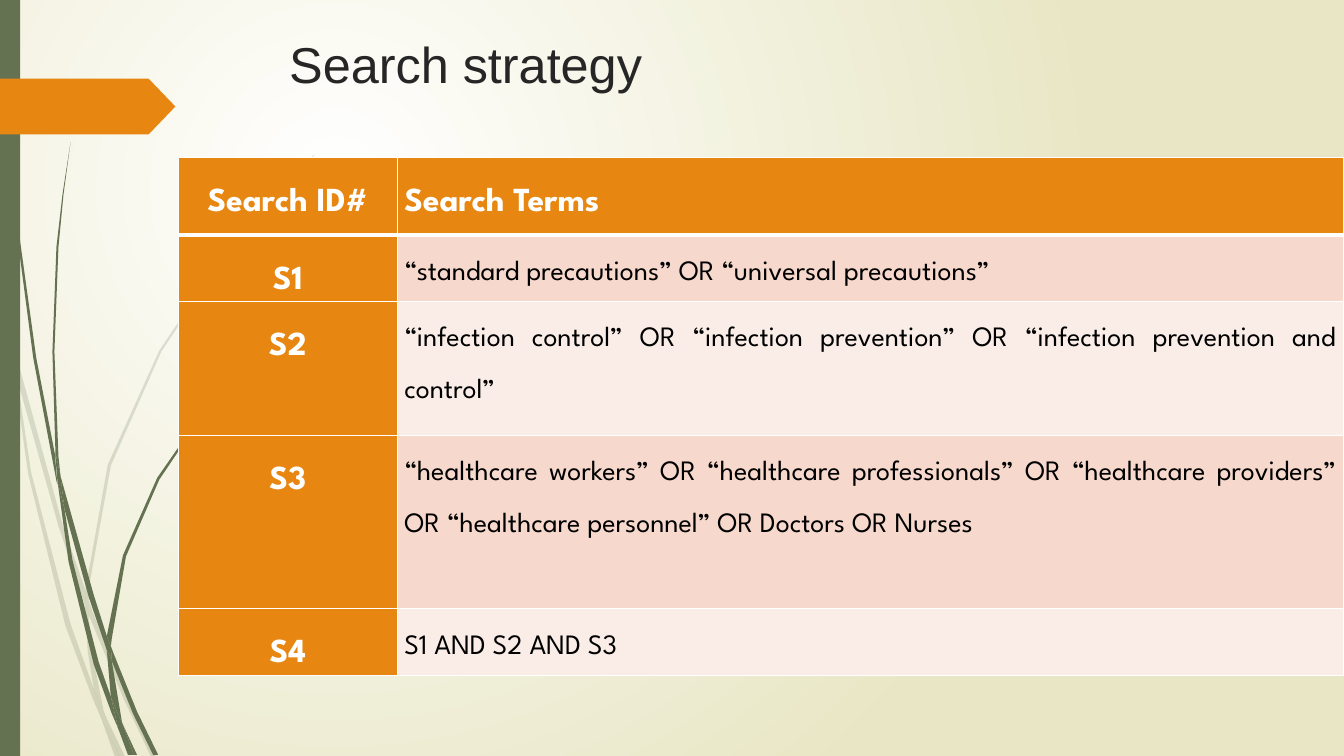
from dataclasses import dataclass

from lxml.etree import SubElement
from pptx import Presentation
from pptx.dml.color import RGBColor
from pptx.enum.shapes import MSO_SHAPE
from pptx.enum.text import MSO_ANCHOR, PP_ALIGN
from pptx.oxml.ns import qn
from pptx.util import Pt

GREEN, ORANGE, WHITE = "647252", "E78712", "FFFFFF"
BLADE_UNIT = Pt(0.72)  # blade outlines are in hundredths of an inch
Outline = list[tuple[int, int]]


@dataclass
class Tuft:
    opacity: int
    blades: list[Outline]


@dataclass
class SearchRow:
    label: str
    terms: str
    height: float
    terms_fill: str
    header: bool = False


PALE_TUFT = Tuft(20, [
    [(11, 350), (9, 322), (0, 282), (0, 299), (10, 344)],
    [(58, 522), (84, 599), (85, 586), (62, 520), (14, 345), (17, 376)],
    [(92, 607), (88, 596), (88, 610), (123, 694), (150, 751), (155, 751), (127, 692)],
    [(119, 751), (124, 751), (105, 711)],
    [(93, 683), (70, 619), (31, 469), (17, 376), (11, 350), (28, 470), (65, 621), (92, 693),
     (101, 714), (99, 707)],
    [(84, 599), (87, 646), (93, 683), (96, 692), (105, 711), (103, 706), (91, 646), (88, 610),
     (88, 608)],
    [(88, 584), (110, 462), (160, 349), (229, 245), (268, 198), (290, 175), (312, 154), (312, 153),
     (289, 175), (268, 197), (228, 244), (158, 348), (107, 461), (85, 584), (85, 586), (88, 596)],
    [(101, 714), (114, 751), (119, 751)],
    [(88, 608), (88, 610), (88, 596), (85, 586), (84, 599)],
    [(96, 692), (93, 683), (99, 707), (101, 714), (119, 751), (105, 711)],
])
DARK_TUFT = Tuft(100, [
    [(7, 110), (17, 233), (33, 355), (56, 477), (57, 481), (55, 457), (55, 453), (36, 355),
     (19, 232), (8, 109), (5, 48), (4, 0), (3, 0), (4, 48)],
    [(88, 592), (106, 645), (106, 633), (106, 631), (93, 590), (60, 472), (64, 505)],
    [(113, 649), (110, 641), (111, 656), (132, 708), (152, 749), (157, 749), (136, 706)],
    [(110, 691), (98, 657), (72, 556), (64, 505), (57, 477), (68, 557), (93, 659), (111, 708),
     (117, 722), (116, 717)],
    [(60, 472), (58, 453), (54, 349), (58, 245), (63, 193), (70, 141), (62, 193), (56, 245),
     (52, 349), (55, 449)],
    [(133, 749), (136, 749), (122, 719)],
    [(57, 477), (64, 505), (60, 472), (55, 449), (55, 453)],
    [(111, 633), (125, 552), (158, 476), (205, 406), (231, 374), (245, 359), (261, 344), (260, 344),
     (245, 358), (231, 373), (204, 405), (156, 474), (122, 551), (106, 631), (110, 641)],
    [(117, 722), (127, 749), (131, 749)],
    [(106, 645), (110, 691), (116, 706), (122, 719), (121, 716), (111, 656), (109, 651)],
    [(106, 645), (109, 651), (111, 656), (110, 641), (106, 631), (106, 633)],
    [(116, 706), (110, 691), (116, 717), (117, 722), (130, 749), (133, 749), (122, 719)],
])
SEARCH_ROWS = [
    SearchRow("Search ID#", "Search Terms", 55.4, ORANGE, header=True),
    SearchRow("S1", "“standard precautions” OR “universal precautions”", 47.6, "F6D9CC"),
    SearchRow("S2", "“infection control” OR “infection prevention” OR "
              "“infection prevention and control”", 95.6, "FAEDE7"),
    SearchRow("S3", "“healthcare workers” OR “healthcare professionals” OR “healthcare providers” "
              "OR “healthcare personnel” OR Doctors OR Nurses", 123.8, "F6D9CC"),
    SearchRow("S4", "S1 AND S2 AND S3", 47.6, "FAEDE7"),
]


def paint(target, color: str) -> None:
    """Give a shape or cell a solid fill."""
    target.fill.solid()
    target.fill.fore_color.rgb = RGBColor.from_string(color)


def finish_shape(shape, color: str) -> None:
    """Fill a shape and drop its line and shadow."""
    paint(shape, color)
    shape.line.fill.background()
    shape.shadow.inherit = False


def set_background(slide) -> None:
    """Fill the slide with a radial gradient centred towards the upper left."""
    fill = slide.background.fill
    fill.gradient()
    for stop, position, color in zip(fill.gradient_stops, (0, 1), (WHITE, "E8E6C4")):
        stop.position = position
        stop.color.rgb = RGBColor.from_string(color)
    gradient = slide.element.find(".//" + qn("a:gradFill"))
    gradient.remove(gradient.find(qn("a:lin")))
    circle = SubElement(gradient, qn("a:path"), path="circle")
    SubElement(circle, qn("a:fillToRect"), l="50000", t="50000", r="100000", b="100000")


def draw_tuft(slide, tuft: Tuft) -> None:
    group = slide.shapes.add_group_shape()
    for start, *rest in tuft.blades:
        builder = group.shapes.build_freeform(*start, scale=BLADE_UNIT)
        builder.add_line_segments(rest, close=True)
        blade = builder.convert_to_shape()
        finish_shape(blade, GREEN)
        if tuft.opacity < 100:
            color = blade.fill._xPr.find(".//" + qn("a:srgbClr"))
            SubElement(color, qn("a:alpha"), val=str(tuft.opacity * 1000))


def draw_side_shapes(slide) -> None:
    bar = slide.shapes.add_shape(MSO_SHAPE.RECTANGLE, 0, 0, Pt(14.4), Pt(540))
    finish_shape(bar, GREEN)
    arrow = slide.shapes.add_shape(MSO_SHAPE.PENTAGON, 0, Pt(56.2), Pt(125.3), Pt(39.8))
    arrow.adjustments[0] = 0.48
    finish_shape(arrow, ORANGE)


def set_title(slide) -> None:
    title = slide.shapes.title
    title.left, title.top, title.width, title.height = Pt(199.4), Pt(20), Pt(702), Pt(67.7)
    frame = title.text_frame
    frame.text = "Search strategy"
    frame.vertical_anchor = MSO_ANCHOR.TOP
    para = frame.paragraphs[0]
    para.alignment = PP_ALIGN.LEFT
    para.font.name, para.font.size = "Arial", Pt(36)
    para.font.color.rgb = RGBColor.from_string("262626")


def set_borders(cell, top: int, bottom: int) -> None:
    """Draw white cell borders; side borders are one point wide."""
    properties = cell._tc.get_or_add_tcPr()
    for tag, width in (("a:lnL", 1), ("a:lnR", 1), ("a:lnT", top), ("a:lnB", bottom)):
        line = SubElement(properties, qn(tag), w=str(Pt(width)))
        SubElement(SubElement(line, qn("a:solidFill")), qn("a:srgbClr"), val=WHITE)


def fill_cell(cell, text: str, fill: str, align: PP_ALIGN, strong: bool) -> None:
    cell.margin_left = cell.margin_right = Pt(5)
    cell.margin_top = cell.margin_bottom = 0
    cell.vertical_anchor = MSO_ANCHOR.TOP
    paint(cell, fill)
    cell.text = text
    para = cell.text_frame.paragraphs[0]
    para.alignment, para.line_spacing = align, 2.0
    para.font.name, para.font.bold = "League Spartan", strong
    para.font.size = Pt(24 if strong else 20)
    para.font.color.rgb = RGBColor.from_string(WHITE if strong else "000000")


def add_search_table(slide, rows: list[SearchRow]) -> None:
    widths = (156.4, 676.2)
    height = sum(row.height for row in rows)
    table = slide.shapes.add_table(len(rows), len(widths), Pt(127.4), Pt(112.3),
                                   Pt(sum(widths)), Pt(height)).table
    table.horz_banding = False
    for column, width in zip(table.columns, widths):
        column.width = Pt(width)
    for index, row in enumerate(rows):
        table.rows[index].height = Pt(row.height)
        label, terms = table.rows[index].cells
        for cell in (label, terms):
            set_borders(cell, top=3 if index == 1 else 1, bottom=3 if row.header else 1)
        fill_cell(label, row.label, ORANGE, PP_ALIGN.CENTER, strong=True)
        fill_cell(terms, row.terms, row.terms_fill, PP_ALIGN.JUSTIFY, strong=row.header)


def main() -> None:
    deck = Presentation()
    deck.slide_width, deck.slide_height = Pt(960), Pt(540)
    slide = deck.slides.add_slide(deck.slide_layouts.get_by_name("Title Only"))
    set_background(slide)
    for tuft in (PALE_TUFT, DARK_TUFT):
        draw_tuft(slide, tuft)
    draw_side_shapes(slide)
    set_title(slide)
    add_search_table(slide, SEARCH_ROWS)
    deck.save("out.pptx")


if __name__ == "__main__":
    main()
